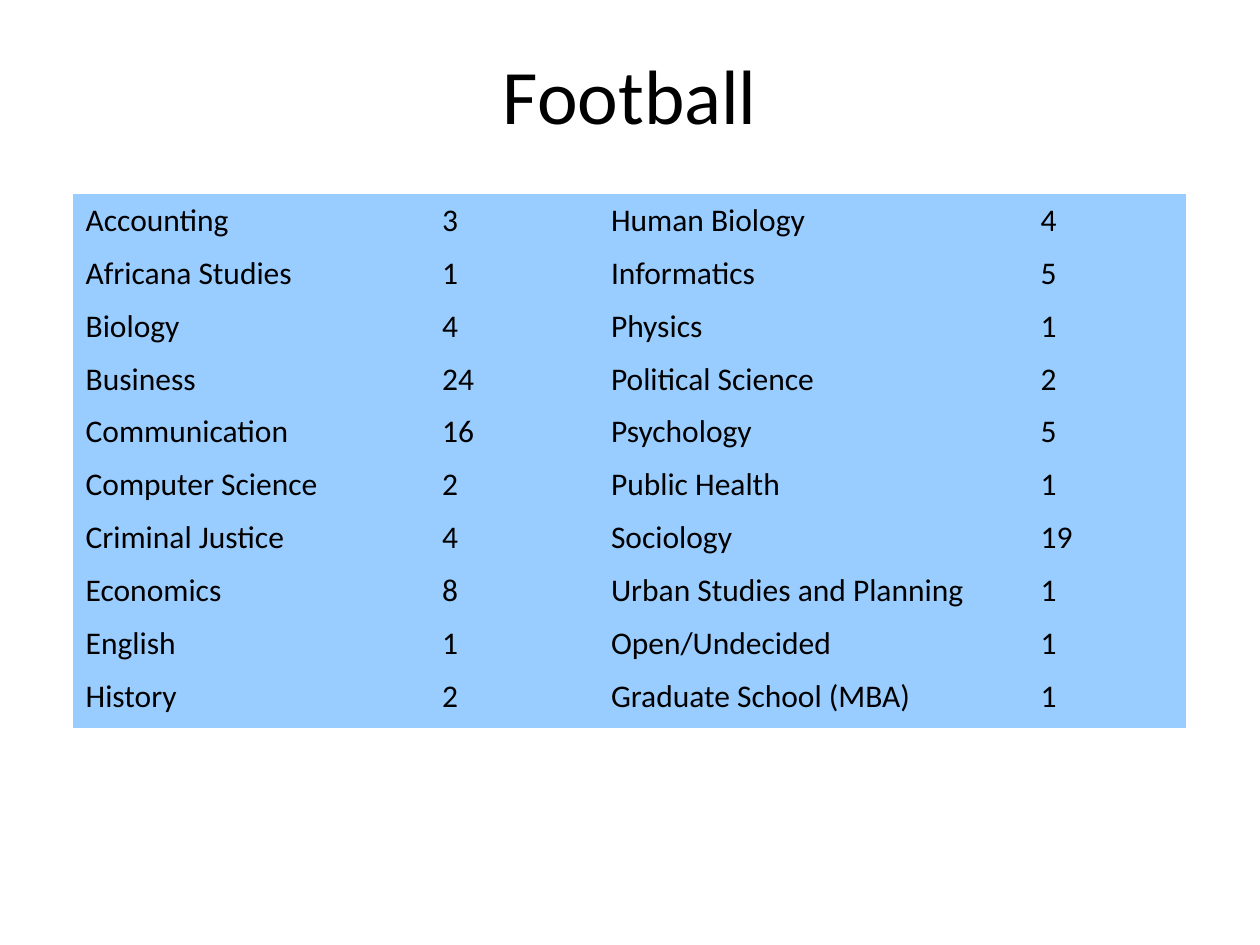
"""Build a slide listing the majors of the football team in a four-column table."""
import pptx
import pptx.dml.color
import pptx.enum.text
import pptx.oxml.ns
import pptx.util

inch = pptx.util.Inches
title_format = {"size": pptx.util.Pt(44), "name": "Calibri"}
cell_format = {"size": pptx.util.Pt(18), "name": "Calibri"}
cell_margins = {"margin_left": inch(0.1), "margin_top": inch(0.07),
                "margin_right": inch(0.1), "margin_bottom": inch(0.05)}
title_frame = {"word_wrap": True, "margin_top": inch(0.08),
               "vertical_anchor": pptx.enum.text.MSO_ANCHOR.TOP}
plain_table_style = "{2D5ABB26-0587-4C30-8999-92F81FD0307C}"
column_widths = [2.83, 1.34, 3.41, 1.25]
row_heights = [0.42] * 9 + [0.46]
majors = [
    ("Accounting", 3, "Human Biology", 4),
    ("Africana Studies", 1, "Informatics", 5),
    ("Biology", 4, "Physics", 1),
    ("Business", 24, "Political Science", 2),
    ("Communication", 16, "Psychology", 5),
    ("Computer Science", 2, "Public Health", 1),
    ("Criminal Justice", 4, "Sociology", 19),
    ("Economics", 8, "Urban Studies and Planning", 1),
    ("English", 1, "Open/Undecided", 1),
    ("History", 2, "Graduate School (MBA)", 1),
]


def set_color(color_format, value):
    color_format.rgb = pptx.dml.color.RGBColor.from_string(value)


def write(paragraph, text, font_format):
    run = paragraph.add_run()
    run.text = text
    for name, value in font_format.items():
        setattr(run.font, name, value)
    set_color(run.font.color, "000000")


presentation = pptx.Presentation()
presentation.slide_width, presentation.slide_height = inch(10), inch(7.5)
width, height = presentation.slide_width, presentation.slide_height
slide = presentation.slides.add_slide(presentation.slide_layouts[6])

title = slide.shapes.add_textbox(
    int(width * 0.05), int(height * 0.04), int(width * 0.9), inch(1.25))
for name, value in title_frame.items():
    setattr(title.text_frame, name, value)
title_paragraph = title.text_frame.paragraphs[0]
title_paragraph.alignment = pptx.enum.text.PP_ALIGN.CENTER
write(title_paragraph, "Football", title_format)

table_shape = slide.shapes.add_table(
    len(majors), len(column_widths), inch(0.58), inch(1.54),
    inch(sum(column_widths)), inch(sum(row_heights)))
table = table_shape.table
table.first_row = table.horz_banding = False
table_properties = table_shape.element.graphic.graphicData.tbl.tblPr
table_properties.find(pptx.oxml.ns.qn("a:tableStyleId")).text = plain_table_style

for column, column_width in zip(table.columns, column_widths):
    column.width = inch(column_width)
for row, row_height, entries in zip(table.rows, row_heights, majors):
    row.height = inch(row_height)
    for cell, entry in zip(row.cells, entries):
        for name, value in cell_margins.items():
            setattr(cell, name, value)
        cell.fill.solid()
        set_color(cell.fill.fore_color, "99CCFF")
        paragraph = cell.text_frame.paragraphs[0]
        paragraph.line_spacing = 0.93
        write(paragraph, str(entry), cell_format)

presentation.save("out.pptx")
